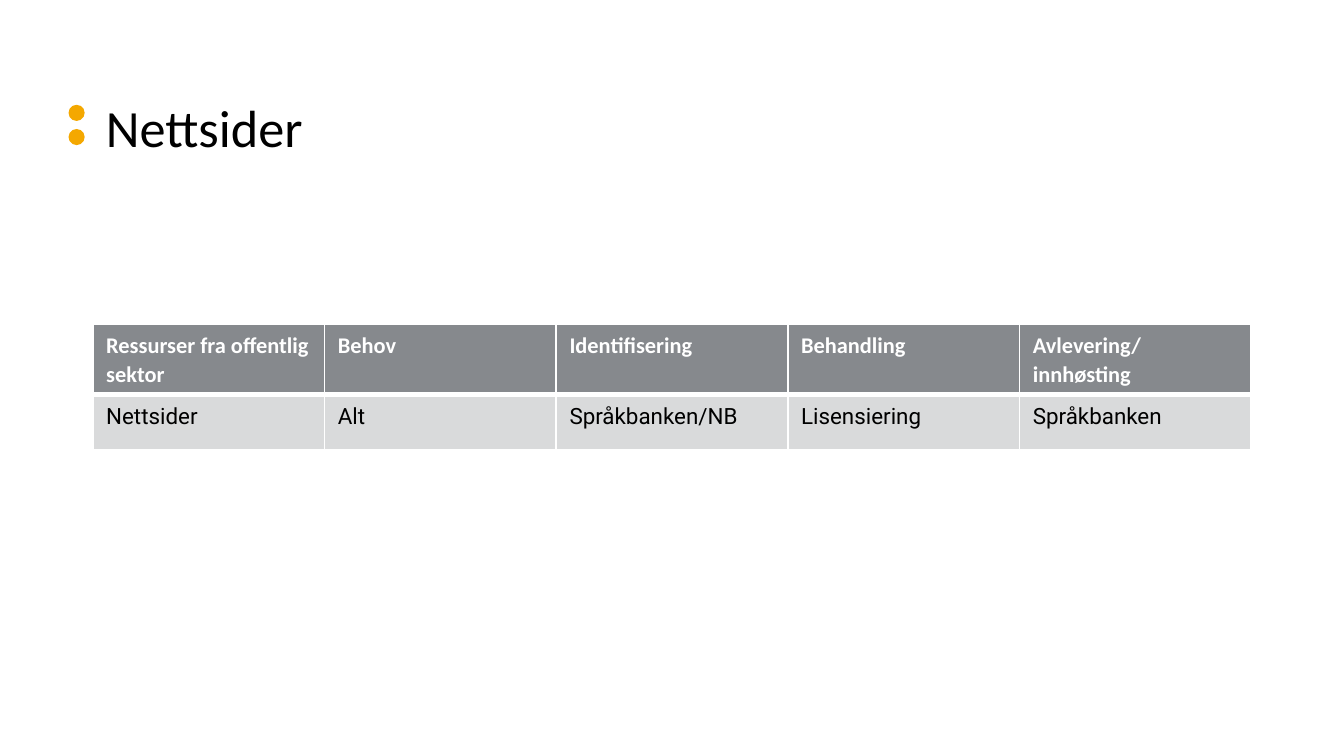
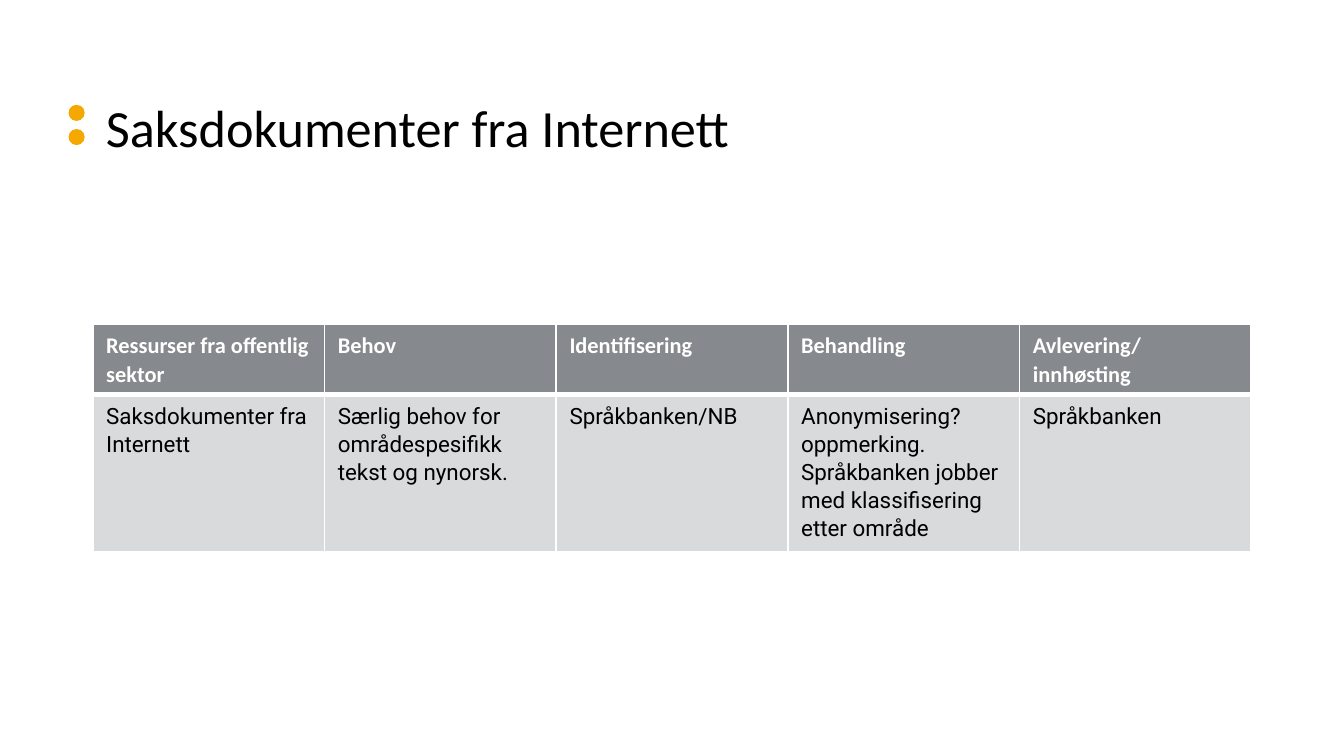
from copy import deepcopy

from lxml.etree import SubElement as Sub
from pptx import Presentation
from pptx.dml.color import RGBColor
from pptx.enum.shapes import MSO_SHAPE as Shape
from pptx.oxml.ns import qn
from pptx.util import Inches, Pt

HEADS = ["Ressurser fra offentlig sektor", "Behov", "Identifisering",
         "Behandling", "Avlevering/innhøsting"]
SLIDES = [
    ("Nettsider", 0.92,
     ["Nettsider", "Alt", "Språkbanken/NB", "Lisensiering", "Språkbanken"]),
    ("Saksdokumenter fra Internett", 1.68,
     ["Saksdokumenter fra Internett",
      "Særlig behov for områdespesifikk tekst og nynorsk.",
      "Språkbanken/NB",
      "Anonymisering?\noppmerking. Språkbanken jobber med klassifisering "
      "etter område",
      "Språkbanken"]),
]

WHITE, BLACK, AMBER, GREY, PALE = "FFFFFF", "000000", "F4A800", "86898D", "D9DADB"
LEFT, WIDTH, ROW = 0.69, 8.62, 0.41
TITLE = {"name": "Calibri", "size": Pt(28), "color": BLACK}
HEAD = {"name": "Calibri", "size": Pt(12), "bold": True, "color": WHITE}
BODY = {"name": "Roboto", "size": Pt(12), "bold": False, "color": BLACK}
TITLE_PARA = {"line_spacing": 0.9}
CELL_PARA = {"line_spacing": 1.07, "space_after": Pt(8)}
HEAD_EDGES = {"lnL": 1, "lnR": 1, "lnT": 1, "lnB": 3}
BODY_EDGES = {"lnL": 1, "lnR": 1, "lnT": 3, "lnB": 1}


def paint(fmt, hue):
    fmt.solid()
    fmt.fore_color.rgb = RGBColor.from_string(hue)


def write(frame, text, font, para):
    p = frame.paragraphs[0]
    p.text = text
    for key, val in para.items():
        setattr(p, key, val)
    for run in p.runs:
        for key, val in font.items():
            if key == "color":
                run.font.color.rgb = RGBColor.from_string(val)
            else:
                setattr(run.font, key, val)
    # A line break takes the size of the text around it
    for br in p._p.findall(qn("a:br")):
        br.insert(0, deepcopy(p.runs[0]._r.rPr))


def edge(cell, widths):
    """Draw white cell borders, placed ahead of the cell fill."""
    props = cell._tc.get_or_add_tcPr()
    for i, (tag, width) in enumerate(widths.items()):
        line = Sub(props, qn(f"a:{tag}"), w=str(Pt(width)))
        Sub(Sub(line, qn("a:solidFill")), qn("a:srgbClr"), val=WHITE)
        props.insert(i, line)


def add_title(slide, text):
    for top in (0.78, 0.96):
        dot = slide.shapes.add_shape(Shape.OVAL, Inches(0.51), Inches(top),
                                     Inches(0.12), Inches(0.12))
        dot.shadow.inherit = False
        paint(dot.fill, AMBER)
        dot.line.fill.background()
    box = slide.shapes.add_textbox(Inches(LEFT), Inches(0.71),
                                   Inches(WIDTH), Inches(0.95))
    box.text_frame.word_wrap = True
    write(box.text_frame, text, TITLE, TITLE_PARA)


def add_grid(slide, cells, height):
    """Add the table; its rows grow with their text to fill the height."""
    rows = [(HEADS, HEAD, GREY, HEAD_EDGES), (cells, BODY, PALE, BODY_EDGES)]
    frame = slide.shapes.add_table(
        len(rows), len(HEADS), Inches(LEFT), Inches(2.41), Inches(WIDTH),
        Inches(ROW * len(rows)))
    frame.height = Inches(height)
    for r, (texts, font, hue, edges) in enumerate(rows):
        for c, text in enumerate(texts):
            cell = frame.table.cell(r, c)
            paint(cell.fill, hue)
            edge(cell, edges)
            write(cell.text_frame, text, font, CELL_PARA)


def main():
    deck = Presentation()
    deck.slide_width = Inches(10)
    deck.slide_height = deck.slide_width * 9 // 16
    for title, height, cells in SLIDES:
        slide = deck.slides.add_slide(deck.slide_layouts[6])
        paint(slide.background.fill, WHITE)
        add_title(slide, title)
        add_grid(slide, cells, height)
    deck.save("out.pptx")


if __name__ == "__main__":
    main()
